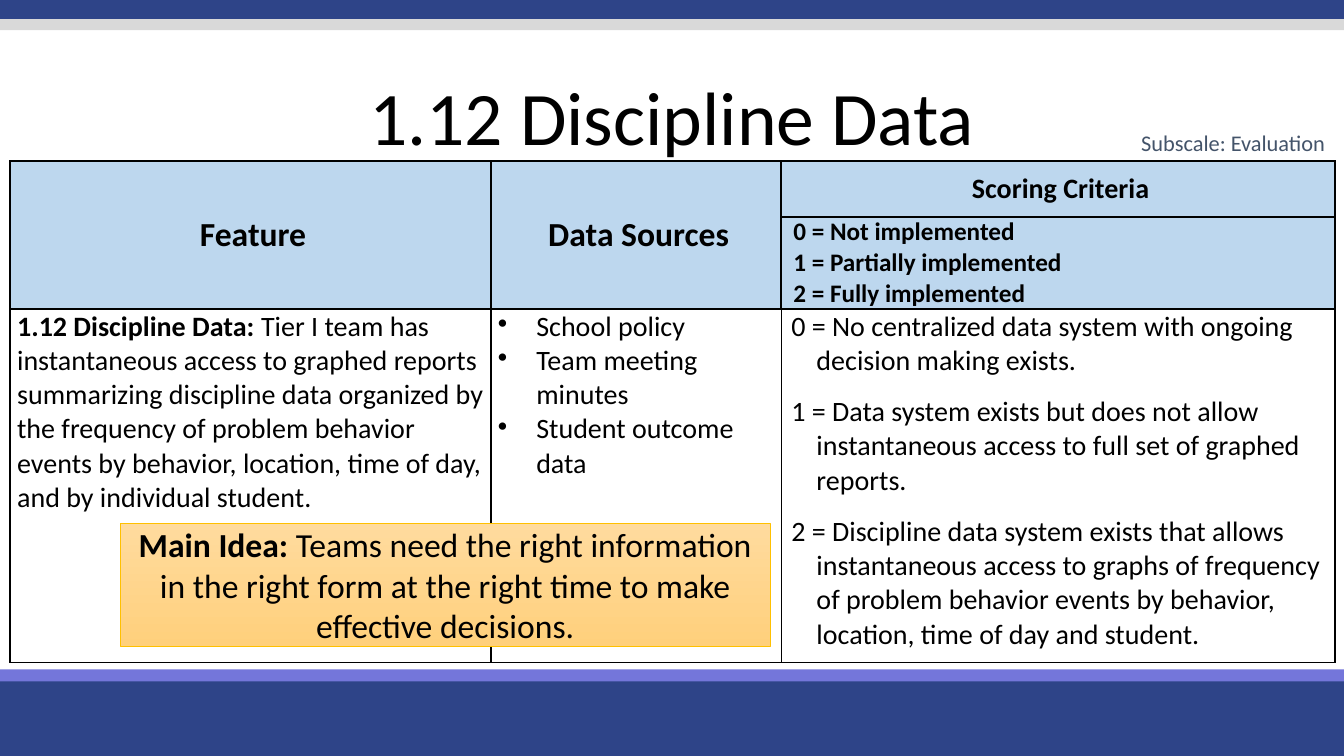
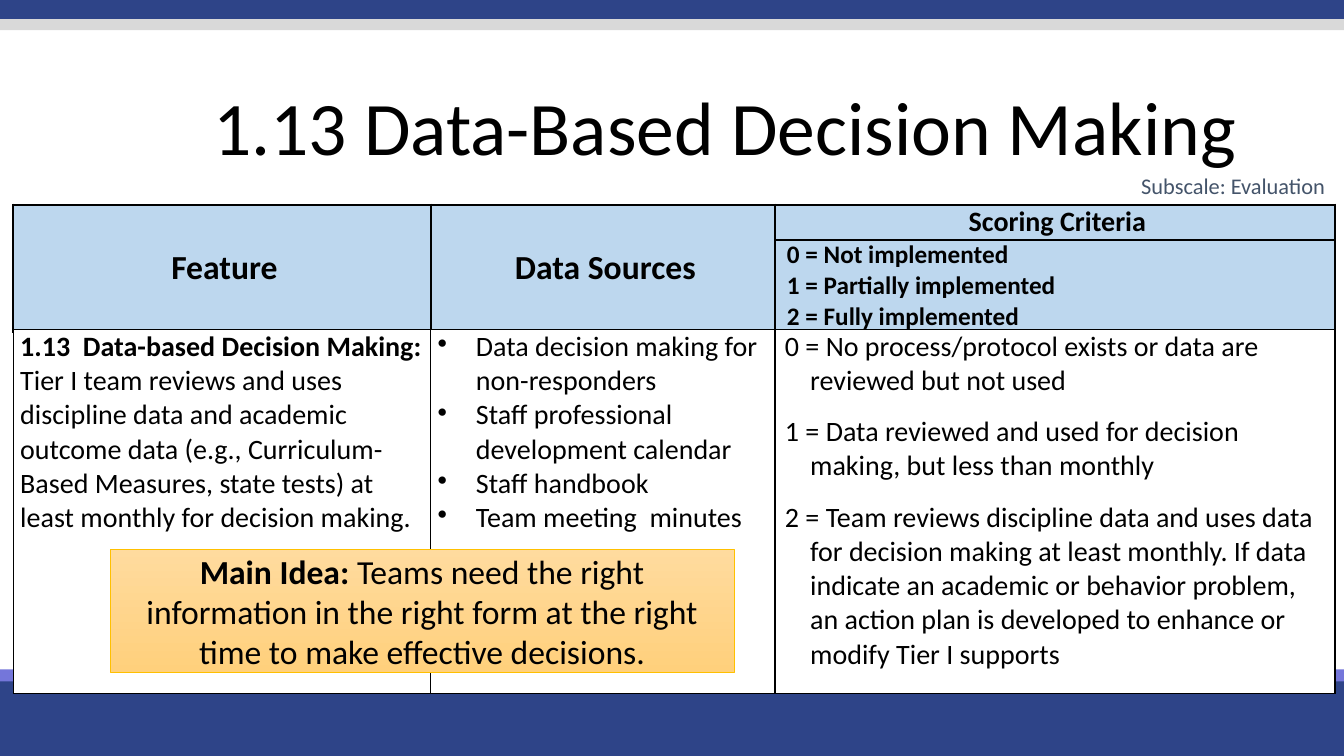
from lxml.etree import Element, SubElement
from pptx import Presentation
from pptx.dml.color import RGBColor
from pptx.enum.shapes import MSO_SHAPE
from pptx.enum.text import MSO_ANCHOR, PP_ALIGN
from pptx.oxml.ns import qn
from pptx.util import Inches, Pt

color = RGBColor.from_string
BLACK, WHITE, HEADER_BLUE = "000000", "FFFFFF", "BDD7EE"
SUBSCALE_TEXT, SUBSCALE_OUTLINE = "44546A", "DEEBF7"
CALLOUT_TOP, CALLOUT_BOTTOM, CALLOUT_LINE = "FFDB9E", "FFD07C", "FFC000"
FONT = "Calibri"

presentation = Presentation()
presentation.slide_width, presentation.slide_height = Inches(13.33), Inches(7.5)

# The slide is a grid of 100 columns and 100 rows.
COLUMN = presentation.slide_width / 100
ROW = presentation.slide_height / 100
RIGHT_EDGE = 99.33
SUBSCALE_WIDTH, SUBSCALE_HEIGHT = 16.13, 4.93
CRITERIA_HEIGHT, CALLOUT_HEIGHT = 12.2, 16.27

# top row, height, colour
BANDS = [
    (89.33, 10.67, "2E4488"),
    (88.53, 1.6, "7476DA"),
    (0, 2.53, "2E4488"),
    (2.53, 1.47, "D9D9D9"),
]
SCORES = ["0 = Not implemented", "1 = Partially implemented", "2 = Fully implemented"]
MAIN_IDEA = [
    ("Main Idea: ", True),
    ("Teams need the right information in the right form at the right time to make "
     "effective decisions.", False),
]

# Paragraph layouts: left margin and first-line indent in inches, space after, bullet
HEADING = (0.36, -0.31, 0, None)
PLAIN = (0, 0, 0, None)
BULLETED = (0.38, -0.38, 0, "•")
SCORED = (0.28, -0.25, 12, None)

FEATURES = [
    {
        "title": "1.12 Discipline Data", "title_left": 0, "title_top": 10,
        "left": 0.75, "top": 21.33, "columns": (35.78, 21.6), "heading_height": 7.33,
        "divider": 1, "body_top": 40.93, "body_height": 46.67,
        "callout": (8.93, 69.2, 48.39),
        "feature": [
            ("1.12 Discipline Data: ", True),
            ("Tier I team has instantaneous access to graphed reports summarizing "
             "discipline data organized by the frequency of problem behavior events by "
             "behavior, location, time of day, and by individual student.", False),
        ],
        "sources": ["School policy", "Team meeting  minutes", "Student outcome data"],
        "criteria": [
            "0 = No centralized data system with ongoing decision making exists.",
            "1 = Data system exists but does not allow instantaneous access to full set "
            "of graphed reports.",
            "2 = Discipline data system exists that allows instantaneous access to graphs "
            "of frequency of problem behavior events by behavior, location, time of day "
            "and student.",
        ],
    },
    {
        "title": "1.13 Data-Based Decision Making", "title_left": 7.88, "title_top": 11.33,
        "left": 0.98, "top": 27.07, "columns": (31.06, 25.62), "heading_height": 4.67,
        "divider": 1.5, "body_top": 43.6, "body_height": 48.13,
        "callout": (8.18, 72.67, 46.44),
        "feature": [
            ("1.13  Data-based Decision Making: ", True),
            ("Tier I team reviews and uses discipline data and academic outcome data "
             "(e.g., Curriculum-Based Measures, state tests) at least monthly for "
             "decision making.", False),
        ],
        "sources": [
            "Data decision making for non-responders",
            "Staff professional development calendar",
            "Staff handbook",
            "Team meeting  minutes",
        ],
        "criteria": [
            "0 = No process/protocol exists or data are reviewed but not used",
            "1 = Data reviewed and used for decision making, but less than monthly",
            "2 = Team reviews discipline data and uses data for decision making at least "
            "monthly. If data indicate an academic or behavior problem, an action plan is "
            "developed to enhance or modify Tier I supports",
        ],
    },
]


def add_runs(paragraph, runs, size, text_color=BLACK):
    """Add (text, bold) pairs to the paragraph, one run each."""
    for text, bold in runs:
        run = paragraph.add_run()
        run.text = text
        run.font.name, run.font.size, run.font.bold = FONT, Pt(size), bold
        run.font.color.rgb = color(text_color)


def fill_cell(cell, paragraphs, size, layout, fill, borders, centered=False):
    """Style a cell; borders are the left, right, top and bottom widths in points."""
    cell.margin_left = cell.margin_right = Inches(0.07)
    cell.margin_top = cell.margin_bottom = 0
    cell_properties = cell._tc.get_or_add_tcPr()
    for side, width in zip("LRTB", borders):
        line = SubElement(cell_properties, qn(f"a:ln{side}"), w=str(Pt(width)))
        SubElement(SubElement(line, qn("a:solidFill")), qn("a:srgbClr"), val=BLACK)
    cell.fill.solid()
    cell.fill.fore_color.rgb = color(fill)
    if centered:
        cell.vertical_anchor = MSO_ANCHOR.MIDDLE

    margin, indent, space_after, bullet = layout
    for index, runs in enumerate(paragraphs):
        frame = cell.text_frame
        paragraph = frame.add_paragraph() if index else frame.paragraphs[0]
        paragraph.alignment = PP_ALIGN.CENTER if centered else PP_ALIGN.LEFT
        paragraph.space_after = Pt(space_after)
        properties = paragraph._p.get_or_add_pPr()
        properties.set("marL", str(Inches(margin)))
        properties.set("indent", str(Inches(indent)))
        if bullet:
            SubElement(properties, qn("a:buChar"), char=bullet)
        add_runs(paragraph, runs, size)


for feature in FEATURES:
    slide = presentation.slides.add_slide(presentation.slide_layouts[6])

    for top, height, band_color in BANDS:
        band = slide.shapes.add_shape(
            MSO_SHAPE.RECTANGLE, 0, int(top * ROW),
            presentation.slide_width, int(height * ROW))
        band.shadow.inherit = False
        band.fill.solid()
        band.fill.fore_color.rgb = color(band_color)
        band.line.fill.background()

    title_left = feature["title_left"]
    title = slide.shapes.add_textbox(
        int(title_left * COLUMN), int(feature["title_top"] * ROW),
        int((100 - title_left) * COLUMN), int(11.33 * ROW))
    title.text_frame.word_wrap = True
    paragraph = title.text_frame.paragraphs[0]
    paragraph.alignment, paragraph.line_spacing = PP_ALIGN.CENTER, 0.9
    add_runs(paragraph, [(feature["title"], False)], 54)

    # Both tables share their left edge and columns.
    left, top = feature["left"], feature["top"]
    table_width = RIGHT_EDGE - left
    columns = [*feature["columns"], table_width - sum(feature["columns"])]
    tables = []
    for table_top, row_heights in (
            (top, [feature["heading_height"], CRITERIA_HEIGHT]),
            (feature["body_top"], [feature["body_height"]])):
        table = slide.shapes.add_table(
            len(row_heights), len(columns), int(left * COLUMN), int(table_top * ROW),
            int(table_width * COLUMN), int(sum(row_heights) * ROW)).table
        table.first_row = table.horz_banding = False
        for column, width in zip(table.columns, columns):
            column.width = int(width * COLUMN)
        for row, height in zip(table.rows, row_heights):
            row.height = int(height * ROW)
        tables.append(table)
    header, body = tables

    divider = feature["divider"]
    headings = [
        ("Feature", 24, (1.5, divider, 1.5, 1.5)),
        ("Data Sources", 24, (divider, 1.5, 1.5, 1.5)),
        ("Scoring Criteria", 20, (1.5,) * 4),
    ]
    for index, (heading, size, borders) in enumerate(headings):
        fill_cell(header.cell(0, index), [[(heading, True)]], size, HEADING,
                  HEADER_BLUE, borders, centered=True)
        scores = [[(score, True)] for score in SCORES] if index == 2 else []
        fill_cell(header.cell(1, index), scores, 18, HEADING, HEADER_BLUE, borders)
        if index < 2:
            header.cell(0, index).merge(header.cell(1, index))

    contents = [
        ([feature["feature"]], PLAIN),
        ([[(source, False)] for source in feature["sources"]], BULLETED),
        ([[(criterion, False)] for criterion in feature["criteria"]], SCORED),
    ]
    for index, (paragraphs, layout) in enumerate(contents):
        fill_cell(body.cell(0, index), paragraphs, 20, layout, WHITE, (1,) * 4)

    callout_left, callout_top, callout_width = feature["callout"]
    callout = slide.shapes.add_shape(
        MSO_SHAPE.RECTANGLE, int(callout_left * COLUMN), int(callout_top * ROW),
        int(callout_width * COLUMN), int(CALLOUT_HEIGHT * ROW))
    callout.shadow.inherit = False
    callout.fill.gradient()
    callout.fill.gradient_angle = 270
    for stop, stop_color in zip(callout.fill.gradient_stops, (CALLOUT_TOP, CALLOUT_BOTTOM)):
        stop.color.rgb = color(stop_color)
    callout.line.color.rgb, callout.line.width = color(CALLOUT_LINE), Pt(0.5)
    callout.text_frame.word_wrap = True
    callout.text_frame.vertical_anchor = MSO_ANCHOR.MIDDLE
    paragraph = callout.text_frame.paragraphs[0]
    paragraph.alignment = PP_ALIGN.CENTER
    add_runs(paragraph, MAIN_IDEA, 24)

    subscale = slide.shapes.add_textbox(
        int((RIGHT_EDGE - SUBSCALE_WIDTH) * COLUMN), int((top - SUBSCALE_HEIGHT) * ROW),
        int(SUBSCALE_WIDTH * COLUMN), int(SUBSCALE_HEIGHT * ROW))
    subscale.text_frame.word_wrap = True
    paragraph = subscale.text_frame.paragraphs[0]
    paragraph.alignment = PP_ALIGN.RIGHT
    add_runs(paragraph, [("Subscale: Evaluation", False)], 16, SUBSCALE_TEXT)
    outline = Element(qn("a:ln"), w=str(Pt(0.75)))
    SubElement(SubElement(outline, qn("a:solidFill")), qn("a:srgbClr"), val=SUBSCALE_OUTLINE)
    paragraph.runs[0]._r.get_or_add_rPr().insert(0, outline)

presentation.save("out.pptx")
